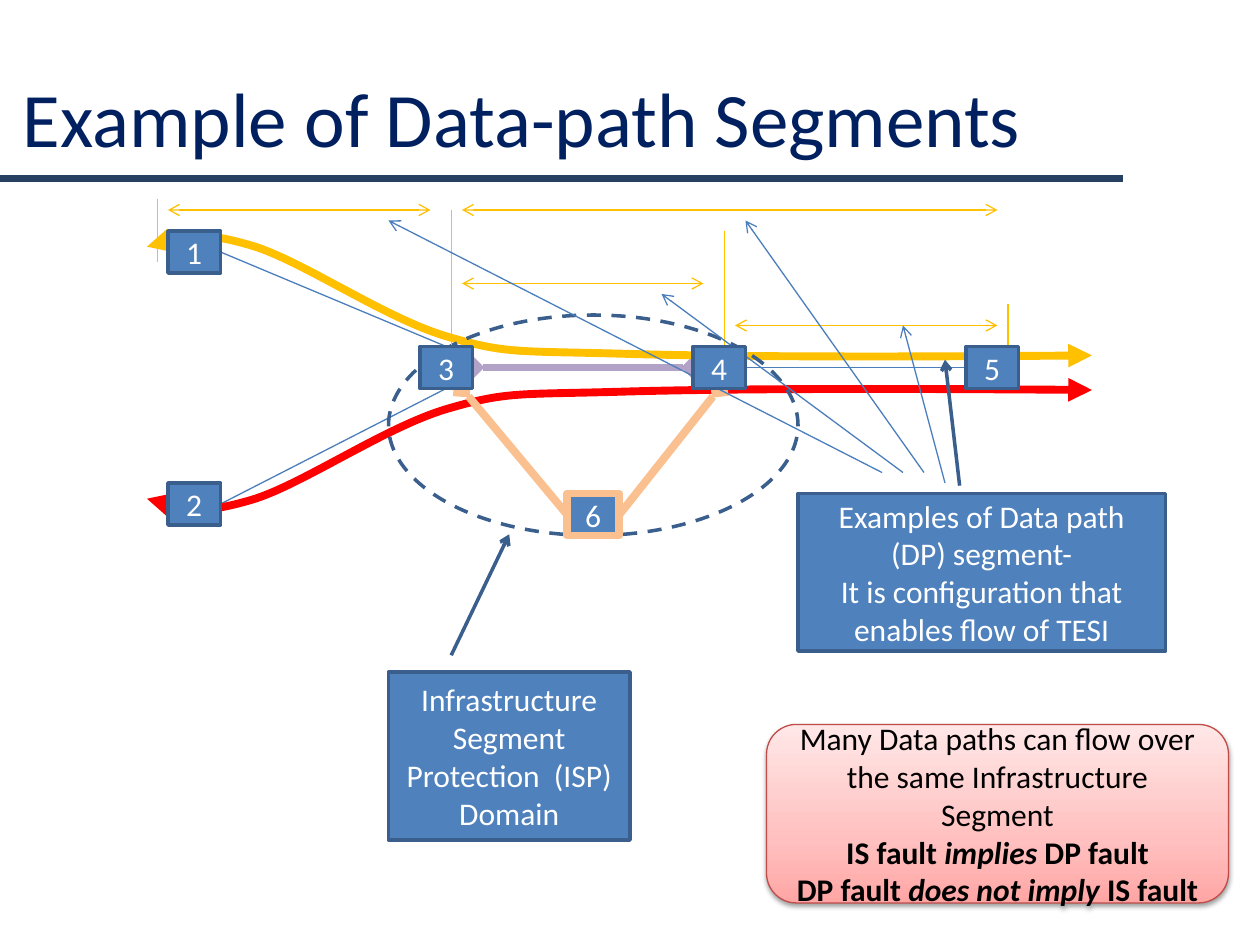
from copy import deepcopy
from dataclasses import dataclass

from pptx import Presentation
from pptx.dml.color import RGBColor
from pptx.enum.dml import MSO_LINE
from pptx.enum.shapes import MSO_CONNECTOR, MSO_SHAPE
from pptx.enum.text import MSO_ANCHOR, PP_ALIGN
from pptx.oxml.ns import qn
from pptx.oxml.xmlchemy import OxmlElement
from pptx.util import Cm, Pt


@dataclass(frozen=True)
class Theme:
    font: str = "Calibri"
    title_size: int = 44
    body_size: int = 18
    title: str = "002060"
    rule: str = "254061"
    block: str = "4F81BD"
    outline: str = "3A5F8C"
    link: str = "4B7EBC"
    working: str = "B3A2C7"
    protection: str = "FAC090"
    upper: str = "FFC000"
    lower: str = "FF0000"
    light: str = "FFFFFF"
    dark: str = "000000"
    note_stops: tuple = ((0, "FFA6A5"), (0.35, "FFC0BF"), (1, "FFE7E7"))
    note_line: str = "BF4C48"
    thin: float = 0.75
    medium: float = 2
    thick: float = 4.5


THEME = Theme()
TOP, LEFT, BOTTOM, RIGHT = range(4)  # connection sites of a rectangle


def cells(count):
    """The slide is laid out on a grid of 12 cells to 2.54 cm."""
    return Cm(count * 2.54 / 12)


def rgb(value):
    return RGBColor.from_string(value)


def add_child(parent, tag, **attributes):
    child = OxmlElement(tag)
    for name, value in attributes.items():
        child.set(name, str(value))
    parent.append(child)
    return child


def style_line(item, color, width, head=None, tail=None):
    item.line.color.rgb = rgb(color)
    item.line.width = Pt(width)
    outline = item._element.spPr.find(qn("a:ln"))
    for tag, kind in (("a:headEnd", head), ("a:tailEnd", tail)):
        if kind:
            add_child(outline, tag, type=kind)


def add_line(slide, box, start, end, color, width=THEME.thin, head=None, tail=None):
    points = [cells(origin + offset) for point in (start, end)
              for origin, offset in zip(box, point)]
    line = slide.shapes.add_connector(MSO_CONNECTOR.STRAIGHT, *points)
    style_line(line, color, width, head, tail)
    add_child(line._element.spPr, "a:effectLst")
    return line


def add_block(slide, kind, box, fill=THEME.block):
    block = slide.shapes.add_shape(kind, *map(cells, box))
    block.shadow.inherit = False
    if fill:
        block.fill.solid()
        block.fill.fore_color.rgb = rgb(fill)
    else:
        block.fill.background()
    return block


def write(holder, text, color, size=THEME.body_size, align=PP_ALIGN.CENTER):
    frame = holder.text_frame
    frame.word_wrap = True
    frame.vertical_anchor = MSO_ANCHOR.MIDDLE
    frame.text = text
    for paragraph in frame.paragraphs:
        paragraph.alignment = align
        font = paragraph.font
        font.name, font.size, font.color.rgb = THEME.font, Pt(size), rgb(color)
    return frame


def draw_heading(slide, box):
    left, top, width, height = box
    heading = slide.shapes.add_textbox(*map(cells, (left + 1, top, width, height)))
    write(heading, "Example of Data-path Segments", THEME.title,
          THEME.title_size, PP_ALIGN.LEFT)
    add_line(slide, box[:2], (0, 13.4), (107, 13.4), THEME.rule, THEME.thick)


def draw_node(slide, box, label, offset, border, width):
    x, y = offset
    node = add_block(slide, MSO_SHAPE.RECTANGLE, (box[0] + x, box[1] + y, 5, 4))
    style_line(node, border, width)
    write(node, label, THEME.light)
    return node


def draw_flow(slide, box, points, color):
    """One start point, then three points for each Bezier segment."""
    start, *rest = [(cells(box[0] + x), cells(box[1] + y)) for x, y in points]
    builder = slide.shapes.build_freeform(*start, scale=1.0)
    builder.add_line_segments(rest, close=False)
    flow = builder.convert_to_shape()
    flow.shadow.inherit = False
    flow.fill.background()
    style_line(flow, color, THEME.thick, "triangle", "triangle")
    segments = list(flow._element.iter(qn("a:lnTo")))
    outline = segments[0].getparent()
    for first in range(0, len(segments), 3):
        curve = add_child(outline, "a:cubicBezTo")
        for segment in segments[first:first + 3]:
            curve.append(segment[0])
            outline.remove(segment)


def draw_network(slide, box):
    # Nodes and the links between them
    places = {"1": (2, 3), "5": (78, 14), "4": (52, 14), "3": (26, 14), "2": (2, 27)}
    nodes = {label: draw_node(slide, box, label, place, THEME.outline, THEME.medium)
             for label, place in places.items()}

    def link(start, start_site, end, end_site, *style):
        line = add_line(slide, box, (0, 0), (1, 1), *style)
        line.begin_connect(nodes[start], start_site)
        line.end_connect(nodes[end], end_site)

    link("1", RIGHT, "3", TOP, THEME.link)
    link("2", RIGHT, "3", BOTTOM, THEME.link)
    link("3", RIGHT, "4", LEFT, THEME.working, THEME.thick, "diamond", "diamond")
    link("4", RIGHT, "5", LEFT, THEME.link)

    # Two data paths, the lower mirroring the upper
    upper = [(0, 4.5), (2.5, 3.75), (5.25, 3), (10, 4.4), (14.7, 5.8), (22.5, 11.2),
             (28.4, 13), (34.3, 14.75), (35.25, 14.4), (45.5, 14.7), (55.75, 15),
             (72.9, 15), (90, 14.85)]
    draw_flow(slide, box, upper, THEME.upper)
    draw_flow(slide, box, [(x, 33 - y) for x, y in upper], THEME.lower)

    # Protection route through node 6, and its domain
    nodes["6"] = draw_node(slide, box, "6", (40, 28), THEME.protection, THEME.thick)
    add_line(slide, box, (30, 18), (40, 30), THEME.protection, THEME.thick, "diamond")
    link("6", RIGHT, "4", BOTTOM, THEME.protection, THEME.thick, None, "diamond")
    domain = add_block(slide, MSO_SHAPE.OVAL, (box[0] + 23, box[1] + 11, 39, 21), None)
    style_line(domain, THEME.outline, THEME.medium)
    domain.line.dash_style = MSO_LINE.DASH
    return nodes.values()


def draw_segments(slide, box):
    # Limits, extents, and pointers to the extents
    for x, top, bottom in ((1, 0, 6), (29, 1, 15), (55, 3, 16), (82, 10, 16)):
        add_line(slide, box, (x, top), (x, bottom), THEME.upper)
    for left, right, y in ((2, 27, 1), (30, 53, 8), (30, 81, 1), (56, 81, 12)):
        add_line(slide, box, (left, y), (right, y), THEME.upper,
                 head="arrow", tail="arrow")
    for start, end in (((76, 27), (72, 12)), ((74, 26), (57, 2)),
                       ((72, 26), (49, 9)), ((70, 26), (23, 2))):
        add_line(slide, box, start, end, THEME.link, tail="arrow")


def bring_to_front(nodes):
    """Keep the node labels clear of every line that meets them."""
    for node in nodes:
        node._element.getparent().append(node._element)


def draw_callout(slide, box, text, leader):
    callout = add_block(slide, MSO_SHAPE.LINE_CALLOUT_1, box)
    for index, value in enumerate(leader):
        callout.adjustments[index] = value
    style_line(callout, THEME.outline, THEME.medium, tail="arrow")
    write(callout, text, THEME.light)


def draw_note(slide, box):
    note = add_block(slide, MSO_SHAPE.ROUNDED_RECTANGLE, box)
    style_line(note, THEME.note_line, THEME.thin)
    # Gradient with a third stop
    note.fill.gradient()
    note.fill.gradient_angle = 90
    stop_list = note._element.spPr.find(qn("a:gradFill")).find(qn("a:gsLst"))
    stop_list.insert(1, deepcopy(stop_list[0]))
    for stop, (position, color) in zip(note.fill.gradient_stops, THEME.note_stops):
        stop.position, stop.color.rgb = position, rgb(color)
    # Soft shadow below
    effects = note._element.spPr.find(qn("a:effectLst"))
    shadow = add_child(effects, "a:outerShdw", blurRad=Pt(3.1), dist=Pt(1.6),
                       dir=90 * 60000, rotWithShape=0)
    add_child(add_child(shadow, "a:srgbClr", val=THEME.dark), "a:alpha", val=38000)
    # Statement, then two conclusions with their verbs in italics
    frame = write(note, "Many Data paths can flow over the same Infrastructure Segment\n\n",
                  THEME.dark)
    conclusions = (("IS fault ", "implies", " DP fault"),
                   ("DP fault ", "does not imply", " IS fault"))
    for paragraph, parts in zip(frame.paragraphs[1:], conclusions):
        for index, part in enumerate(parts):
            run = paragraph.add_run()
            run.text = part
            run.font.bold, run.font.italic = True, index == 1


def main():
    deck = Presentation()
    deck.slide_width, deck.slide_height = cells(120), cells(90)
    slide = deck.slides.add_slide(deck.slide_layouts[6])
    diagram = (14, 19)
    draw_heading(slide, (0, 3.6, 108, 15))
    nodes = draw_network(slide, diagram)
    draw_segments(slide, diagram)
    bring_to_front(nodes)
    draw_callout(slide, (76, 47, 35, 15),
                 "Examples of Data path (DP) segment-\n"
                 "It is configuration that enables flow of TESI",
                 (-0.05, 0.44, -0.85, 0.4))
    draw_callout(slide, (37, 64, 23, 16),
                 "Infrastructure Segment Protection  (ISP) Domain",
                 (-0.1, 0.26, -0.82, 0.5))
    draw_note(slide, (73, 69, 44, 17))
    deck.save("out.pptx")


if __name__ == "__main__":
    main()
